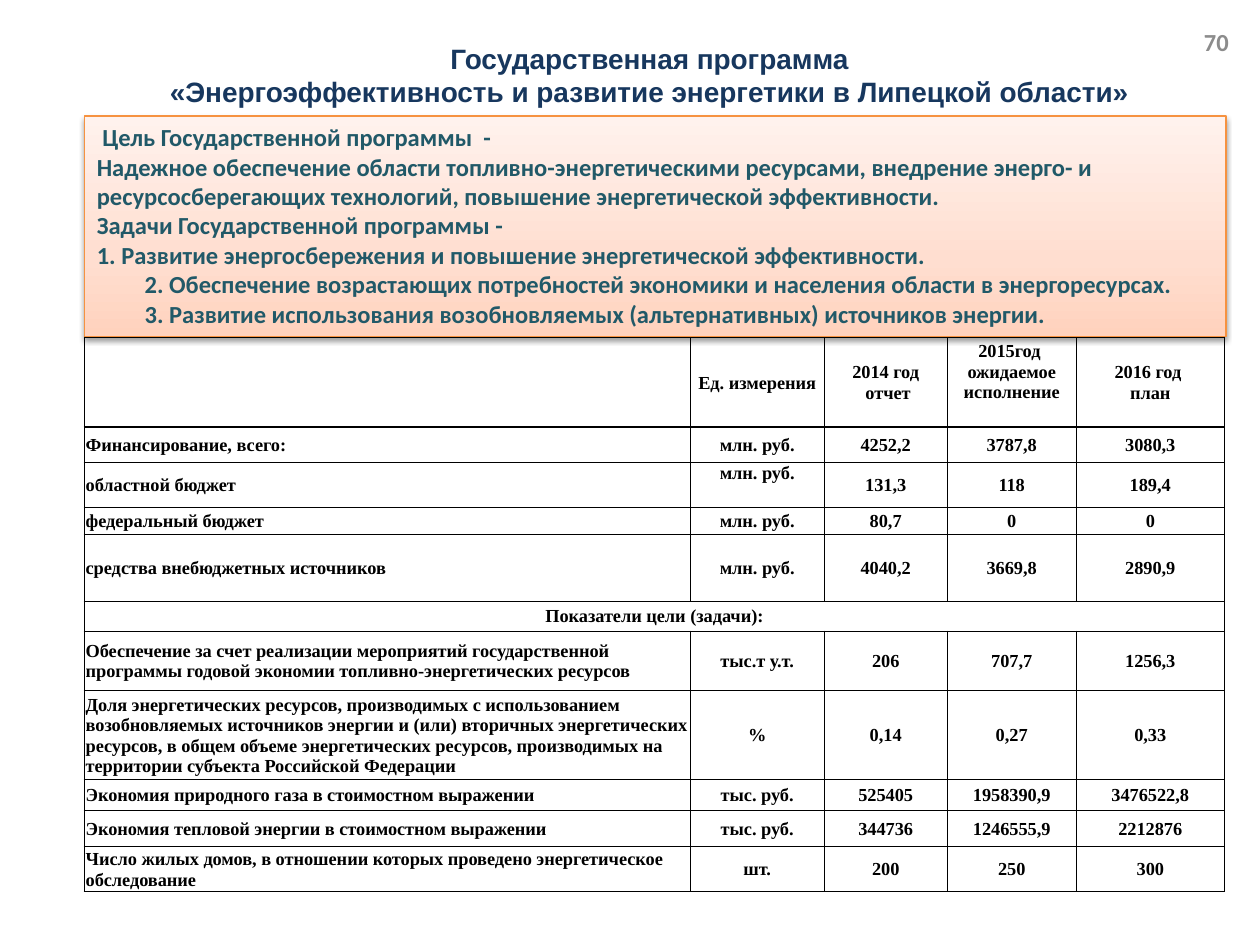
import copy

import pptx
import pptx.dml.color
import pptx.enum.shapes
import pptx.enum.text
import pptx.oxml
import pptx.oxml.ns
import pptx.util

ALIGN = pptx.enum.text.PP_ALIGN
ANCHOR = pptx.enum.text.MSO_ANCHOR
NAMESPACE = pptx.oxml.ns.nsdecls("a")
qn = pptx.oxml.ns.qn

COLUMN_WIDTHS = [48.1, 10.6, 9.8, 10.2, 11.8]
ROW_HEIGHTS = [2, 7.1, 2.8, 3.6, 2.1, 5.3, 2.4, 4.7, 7.1, 2.4, 2.9, 3.6]
HEADING_ROW, SECTION_ROW = 1, 6
TOP_CELLS = {(1, 3): 0.03, (3, 1): 0.01}
ROWS = [
    [""] * 5,
    ["", "Ед. измерения", "2014 год\n отчет", "2015год \nожидаемое исполнение", "2016 год \nплан"],
    ["Финансирование, всего:", "млн. руб.", "4252,2", "3787,8", "3080,3"],
    ["областной бюджет", "млн. руб.", "131,3", "118", "189,4"],
    ["федеральный бюджет", "млн. руб.", "80,7", "0", "0"],
    ["средства внебюджетных источников", "млн. руб.", "4040,2", "3669,8", "2890,9"],
    ["Показатели цели (задачи):", "", "", "", ""],
    ["Обеспечение за счет реализации мероприятий государственной программы годовой экономии "
     "топливно-энергетических ресурсов", "тыс.т у.т.", "206", "707,7", "1256,3"],
    ["Доля энергетических ресурсов, производимых с использованием возобновляемых источников "
     "энергии и (или) вторичных энергетических ресурсов, в общем объеме энергетических ресурсов, "
     "производимых на территории субъекта Российской Федерации", "%", "0,14", "0,27", "0,33"],
    ["Экономия природного газа в стоимостном выражении", "тыс. руб.", "525405", "1958390,9", "3476522,8"],
    ["Экономия тепловой энергии в стоимостном выражении", "тыс. руб.", "344736", "1246555,9", "2212876"],
    ["Число жилых домов, в отношении которых проведено энергетическое обследование",
     "шт.", "200", "250", "300"],
]
GOALS = [
    (" Цель Государственной программы  -", 0, 0),
    ("Надежное обеспечение области топливно-энергетическими ресурсами, внедрение энерго- и "
     "ресурсосберегающих технологий, повышение энергетической эффективности.", 0, 0),
    ("Задачи Государственной программы -", 0, 0),
    ("1. Развитие энергосбережения и повышение энергетической эффективности.", 0.38, -0.38),
    ("2. Обеспечение возрастающих потребностей экономики и населения области в энергоресурсах.", 0.38, 0),
    ("3. Развитие использования возобновляемых (альтернативных) источников энергии.", 0.38, 0),
]


def color(value):
    return pptx.dml.color.RGBColor.from_string(value)


class ProgramSlide:
    ink = "000000"
    goal_ink = "215968"
    title_ink = "17375E"
    number_ink = "8C8C8C"
    table_size = 10.5

    def __init__(self, deck):
        self.page = deck.slides.add_slide(deck.slide_layouts[6])
        self.column = deck.slide_width / 100
        self.row = deck.slide_height / 75
        self.page.background.fill.solid()
        self.page.background.fill.fore_color.rgb = color("FFFFFF")

    def place(self, left, top, width, height):
        return [int(left * self.column), int(top * self.row),
                int(width * self.column), int(height * self.row)]

    def add_lines(self, frame, lines, face, size, ink, align=ALIGN.LEFT):
        frame.word_wrap = True
        for index, line in enumerate(lines):
            para = frame.paragraphs[0] if index == 0 else frame.add_paragraph()
            para.alignment = align
            span = para.add_run()
            span.text = line
            span.font.name = face
            span.font.size = pptx.util.Pt(size)
            span.font.bold = True
            span.font.color.rgb = color(ink)

    def text(self, area, lines, face, size, ink, align, anchor=ANCHOR.TOP):
        box = self.page.shapes.add_textbox(*self.place(*area))
        box.text_frame.vertical_anchor = anchor
        self.add_lines(box.text_frame, lines, face, size, ink, align)

    def goals(self, area, items):
        panel = self.page.shapes.add_shape(
            pptx.enum.shapes.MSO_SHAPE.RECTANGLE, *self.place(*area))
        self.gradient(panel, [(0, "FFD2BD"), (0.35, "FFDED0"), (1, "FFF2ED")])
        panel.line.color.rgb = color("F69240")
        panel.line.width = pptx.util.Pt(0.75)
        self.shadow(panel)
        frame = panel.text_frame
        frame.vertical_anchor = ANCHOR.TOP
        self.add_lines(frame, [item[0] for item in items], "Calibri", 14, self.goal_ink)
        for para, (_, margin, indent) in zip(frame.paragraphs, items):
            if margin:
                properties = para._p.get_or_add_pPr()
                properties.set("marL", str(pptx.util.Inches(margin)))
                properties.set("indent", str(pptx.util.Inches(indent)))

    def gradient(self, shape, stops):
        shape.fill.gradient()
        shape.fill.gradient_angle = 90
        stop_list = shape._element.find(".//" + qn("a:gsLst"))
        stop_list.append(copy.deepcopy(stop_list[-1]))
        for stop, (position, value) in zip(shape.fill.gradient_stops, stops):
            stop.position = position
            stop.color.rgb = color(value)

    def shadow(self, shape):
        shape.shadow.inherit = False
        shape._element.spPr.find(qn("a:effectLst")).append(pptx.oxml.parse_xml(
            f'<a:outerShdw {NAMESPACE} blurRad="{pptx.util.Pt(3.1)}" dist="{pptx.util.Pt(1.6)}" '
            f'dir="5400000" rotWithShape="0"><a:srgbClr val="{self.ink}">'
            '<a:alpha val="38000"/></a:srgbClr></a:outerShdw>'))

    def table(self, left, top, rows):
        area = self.place(left, top, sum(COLUMN_WIDTHS), sum(ROW_HEIGHTS))
        grid = self.page.shapes.add_table(len(rows), len(COLUMN_WIDTHS), *area).table
        grid.first_row = grid.horz_banding = False
        for column, width in zip(grid.columns, COLUMN_WIDTHS):
            column.width = int(width * self.column)
        for row, height in zip(grid.rows, ROW_HEIGHTS):
            row.height = int(height * self.row)
        for merged in (0, SECTION_ROW):
            grid.cell(merged, 0).merge(grid.cell(merged, len(COLUMN_WIDTHS) - 1))
        for row, values in enumerate(rows):
            for column, value in enumerate(values):
                self.cell(grid.cell(row, column), row, column, value)

    def cell(self, cell, row, column, value):
        margin = TOP_CELLS.get((row, column), 0.01)
        cell.margin_left = cell.margin_right = pptx.util.Inches(0.01)
        cell.margin_top, cell.margin_bottom = pptx.util.Inches(margin), 0
        cell.vertical_anchor = ANCHOR.TOP if (row, column) in TOP_CELLS else ANCHOR.MIDDLE
        if value:
            align = ALIGN.CENTER if column or row == SECTION_ROW else ALIGN.LEFT
            self.add_lines(cell.text_frame, value.split("\n"), "Times New Roman",
                           self.table_size, self.ink, align)
        else:
            cell.text_frame.paragraphs[0]._p.append(pptx.oxml.parse_xml(
                f'<a:endParaRPr {NAMESPACE} sz="{int(self.table_size * 100)}"/>'))
        self.borders(cell, row, column)
        cell.fill.background()

    def borders(self, cell, row, column):
        weights = {
            "L": 1 if row and column == 0 else 0.5,
            "R": 0.5,
            "T": 1 if row in (HEADING_ROW, HEADING_ROW + 1) else 0.5,
            "B": 1 if row <= HEADING_ROW else 0.5,
        }
        properties = cell._tc.get_or_add_tcPr()
        for side, weight in weights.items():
            properties.append(pptx.oxml.parse_xml(
                f'<a:ln{side} {NAMESPACE} w="{pptx.util.Pt(weight)}"><a:solidFill>'
                f'<a:srgbClr val="{self.ink}"/></a:solidFill></a:ln{side}>'))


def main():
    deck = pptx.Presentation()
    deck.slide_width = pptx.util.Inches(10)
    deck.slide_height = pptx.util.Inches(7.5)
    slide = ProgramSlide(deck)
    slide.text((91.7, 1.3, 6.8, 4), ["70"], "Calibri", 14, slide.number_ink,
               ALIGN.RIGHT, ANCHOR.MIDDLE)
    slide.table(6.7, 24.8, ROWS)
    slide.text((9, 2.8, 85.1, 6.4),
               ["Государственная программа",
                "«Энергоэффективность и развитие энергетики в Липецкой области»"],
               "Arial", 16, slide.title_ink, ALIGN.CENTER)
    slide.goals((6.7, 9.2, 90.6, 17.5), GOALS)
    deck.save("out.pptx")


if __name__ == "__main__":
    main()
